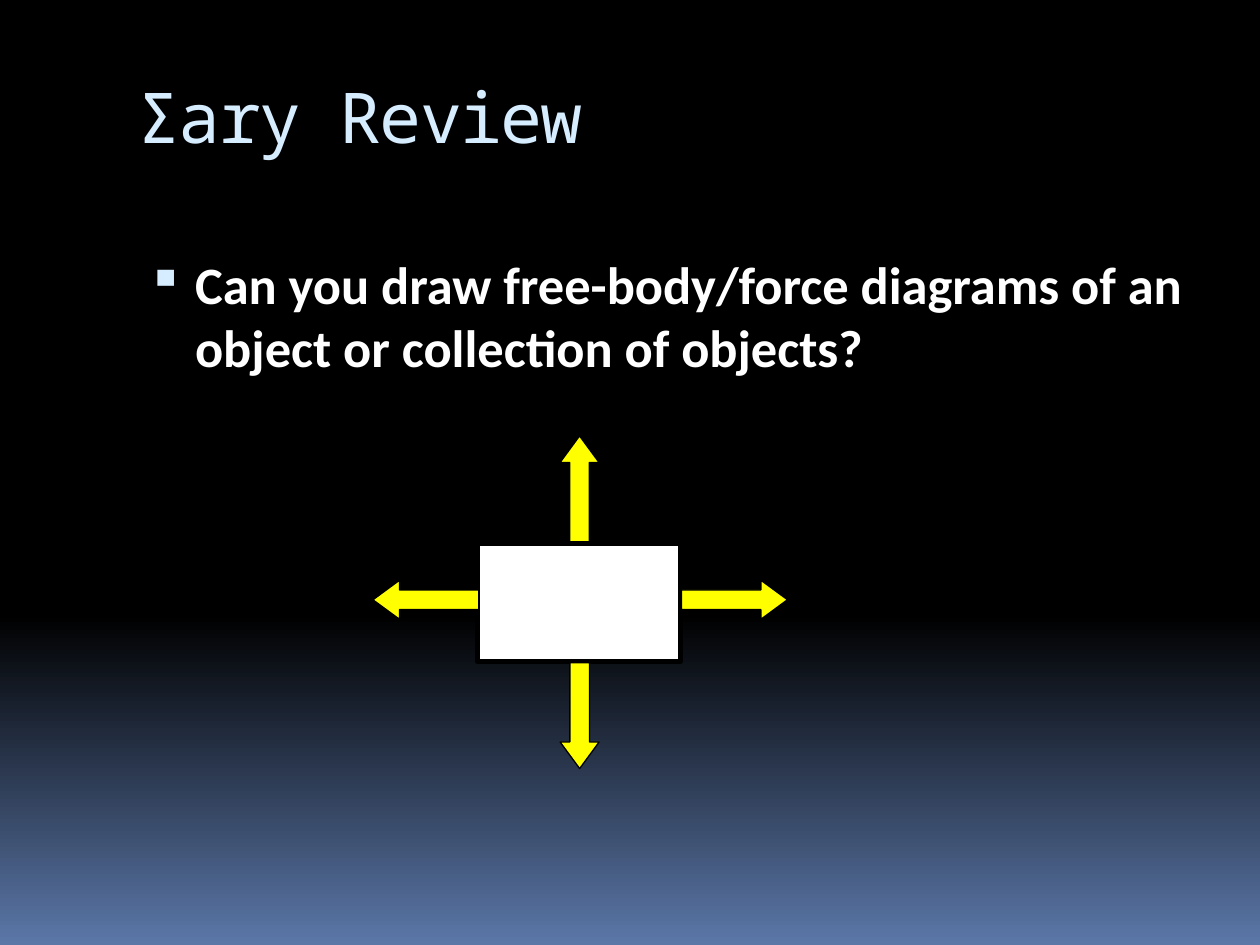
from copy import deepcopy
from dataclasses import dataclass

from lxml import etree
from pptx import Presentation
from pptx.dml.color import RGBColor
from pptx.enum.shapes import MSO_SHAPE
from pptx.enum.text import MSO_ANCHOR, PP_ALIGN
from pptx.oxml.ns import qn
from pptx.util import Inches, Pt

RECTANGLE, ARROW = MSO_SHAPE.RECTANGLE, MSO_SHAPE.RIGHT_ARROW
TOP, LEFT = MSO_ANCHOR.TOP, PP_ALIGN.LEFT

BLACK = RGBColor(0x00, 0x00, 0x00)
WHITE = RGBColor(0xFF, 0xFF, 0xFF)
YELLOW = RGBColor(0xFF, 0xFF, 0x00)
PALE_BLUE = RGBColor(0xD6, 0xEC, 0xFF)
DUSK_BLUE = RGBColor(0x5B, 0x77, 0xA8)

TITLE_FONT = {"name": "Noto Sans Mono", "size": Pt(40), "bold": False}
BODY_FONT = {"name": "Calibri", "size": Pt(30), "bold": True}
ARROW_LENGTH, ARROW_WIDTH = 0.84, 0.31


@dataclass(frozen=True)
class Force:
    """An arrow, given by its centre in inches and its clockwise rotation."""
    center_x: float
    center_y: float
    rotation: int


FORCES = (
    Force(5.83, 4.76, 0),
    Force(4.6, 3.88, 270),
    Force(3.38, 4.76, 180),
    Force(4.6, 5.68, 90),
)


def set_background(slide) -> None:
    fill = slide.background.fill
    fill.gradient()
    fill.gradient_angle = 270
    stop_list = slide.element.find(".//" + qn("a:gsLst"))
    stop_list.append(deepcopy(stop_list[-1]))
    stops = ((0, BLACK), (0.65, BLACK), (1, DUSK_BLUE))
    for stop, (position, color) in zip(fill.gradient_stops, stops):
        stop.position = position
        stop.color.rgb = color


def write_text(shape, text: str, font_format: dict, color: RGBColor):
    frame = shape.text_frame
    frame.word_wrap = True
    frame.vertical_anchor = TOP
    paragraph = frame.paragraphs[0]
    paragraph.alignment = LEFT
    run = paragraph.add_run()
    run.text = text
    for name, value in font_format.items():
        setattr(run.font, name, value)
    run.font.color.rgb = color
    return paragraph


def add_bullet(paragraph) -> None:
    properties = paragraph._p.get_or_add_pPr()
    properties.set("marL", str(Inches(0.45)))
    properties.set("indent", str(Inches(-0.38)))
    color = etree.SubElement(properties, qn("a:buClr"))
    etree.SubElement(color, qn("a:srgbClr"), val=str(PALE_BLUE))
    etree.SubElement(properties, qn("a:buSzPct"), val="95000")
    etree.SubElement(properties, qn("a:buChar"), char="▪")


def add_outlined(slide, kind, left: float, top: float, width: float,
                 height: float, fill: RGBColor, line_width: float):
    shape = slide.shapes.add_shape(
        kind, Inches(left), Inches(top), Inches(width), Inches(height))
    shape.shadow.inherit = False
    shape.fill.solid()
    shape.fill.fore_color.rgb = fill
    shape.line.color.rgb = BLACK
    shape.line.width = Pt(line_width)
    return shape


def add_force(slide, force: Force) -> None:
    arrow = add_outlined(
        slide, ARROW, force.center_x - ARROW_LENGTH / 2,
        force.center_y - ARROW_WIDTH / 2, ARROW_LENGTH, ARROW_WIDTH,
        YELLOW, 0.75)
    arrow.adjustments[1] = 0.68
    arrow.rotation = force.rotation


def main() -> None:
    presentation = Presentation()
    presentation.slide_width, presentation.slide_height = Inches(10), Inches(7.5)
    slide = presentation.slides.add_slide(presentation.slide_layouts[5])
    set_background(slide)

    # Title
    title = slide.shapes.title
    title.left, title.top = Inches(1), Inches(0.56)
    title.width, title.height = Inches(8.5), Inches(1)
    paragraph = write_text(title, "Σary Review", TITLE_FONT, PALE_BLUE)
    title.text_frame.margin_top = Inches(0.02)
    paragraph.runs[0].font._element.set("spc", "-100")

    # Question
    body = slide.shapes.add_textbox(
        Inches(1), Inches(1.95), Inches(8.5), Inches(5))
    question = write_text(
        body, "Can you draw free-body/force diagrams of an object or "
        "collection of objects?", BODY_FONT, WHITE)
    question.space_before = Pt(7)
    add_bullet(question)

    # Free-body diagram
    add_outlined(slide, RECTANGLE, 3.79, 4.31, 1.61, 0.94, WHITE, 3)
    for force in FORCES:
        add_force(slide, force)

    presentation.save("out.pptx")


if __name__ == "__main__":
    main()
